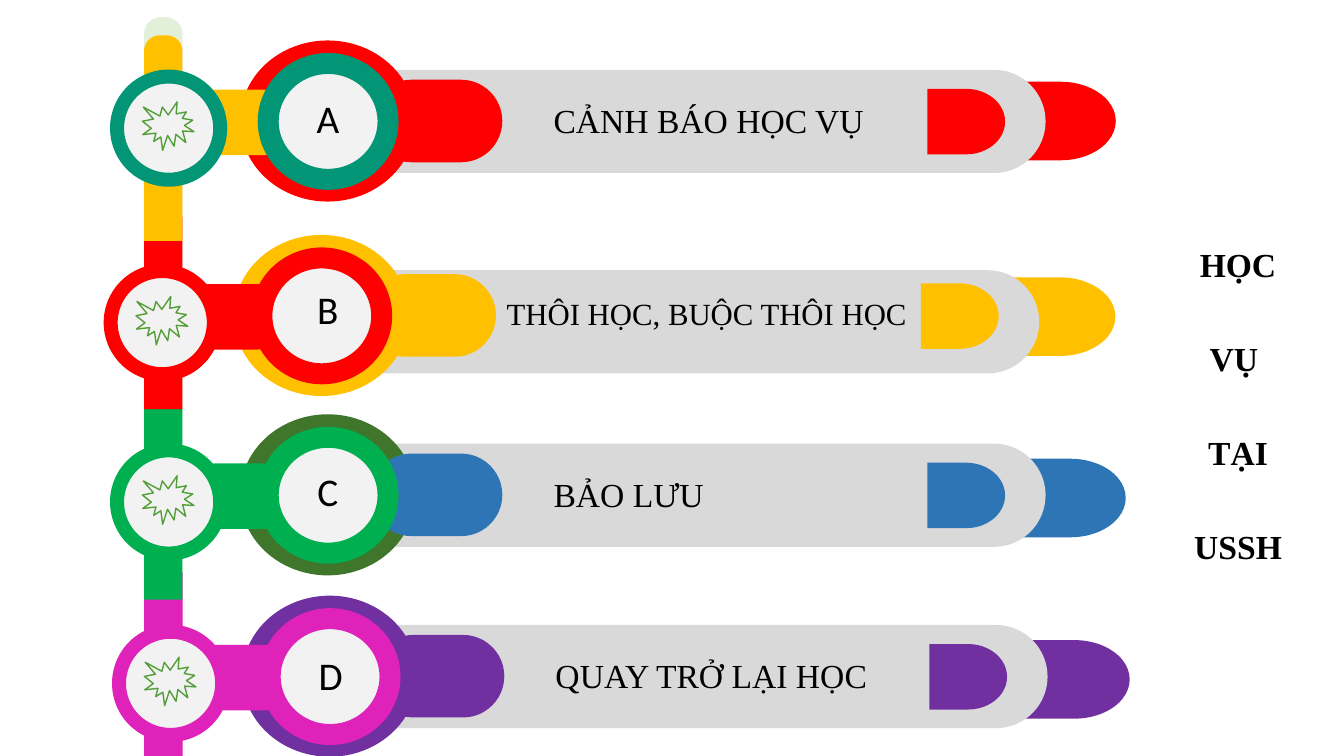
import pptx
import pptx.dml.color
import pptx.enum.shapes
import pptx.enum.text
import pptx.util

Cm = pptx.util.Cm
Pt = pptx.util.Pt
KIND = pptx.enum.shapes.MSO_SHAPE
ALIGN = pptx.enum.text.PP_ALIGN
ANCHOR = pptx.enum.text.MSO_ANCHOR
FIT = pptx.enum.text.MSO_AUTO_SIZE

PALE, GREY, BLACK, LEAF = "F2F2F2", "D9D9D9", "000000", "549E39"
SERIF, SANS = "Times New Roman", "Calibri"

# Spine pieces: top, colour, rotation, from back to front
SPINE = [
    (14.43, "DE22BA", 180),
    (9.93, "00B050", 0),
    (5.13, "FF0000", 0),
    (0.89, "FFC000", 0),
]

# Each row: corner of its large disc, wording, colours, and its own offsets
ROWS = [
    dict(corner=(6.1, 15.01), letter="D", title="QUAY TRỞ LẠI HỌC",
         disc="7030A0", accent="7030A0", link="DE22BA", ring="DE22BA",
         tail=(19.58, 1.12), letter_at=(1.68, 1.27)),
    dict(corner=(5.89, 5.92), letter="B", title="THÔI HỌC, BUỘC THÔI HỌC",
         disc="FFC000", accent="FFC000", link="FF0000", ring="FF0000",
         tail=(19.43, 1.07), letter_at=(1.85, 1.14),
         bar_top=0.89, title_box=(6.63, 1.37, 11.71, 1.19), title_size=22),
    dict(corner=(6.05, 10.44), letter="C", title="BẢO LƯU",
         disc="3F762B", accent="2E75B6", link="00B050", ring="00B050",
         tail=(19.53, 1.12), letter_at=(1.7, 1.22)),
    dict(corner=(6.05, 1.02), letter="A", title="CẢNH BÁO HỌC VỤ",
         disc="FF0000", accent="FF0000", link="FFC000", ring="029676",
         tail=(19.28, 1.04), letter_at=(1.68, 1.22)),
]


def colour(value):
    return pptx.dml.color.RGBColor.from_string(value)


def add_part(page, kind, box, fill, line=None, width=0, adjust=()):
    part = page.shapes.add_shape(kind, *map(Cm, box))
    part.shadow.inherit = False
    part.fill.solid()
    part.fill.fore_color.rgb = colour(fill)
    if line:
        part.line.color.rgb = colour(line)
        part.line.width = Pt(width)
    else:
        part.line.fill.background()
    for index, value in enumerate(adjust):
        part.adjustments[index] = value
    return part


def add_span(para, text, size, font, bold=False):
    span = para.add_run()
    span.text = text
    span.font.size = Pt(size)
    span.font.name = font
    span.font.bold = bold
    span.font.color.rgb = colour(BLACK)


def add_label(page, box, text, size, font):
    frame = page.shapes.add_textbox(*map(Cm, box)).text_frame
    frame.word_wrap = True
    frame.auto_size = FIT.SHAPE_TO_FIT_TEXT
    add_span(frame.paragraphs[0], text, size, font)


def add_spine(page, left, top, width):
    add_part(page, KIND.ROUNDED_RECTANGLE, (left, top, width, 19.1),
             "E2F0D9", adjust=[0.443])
    for piece_top, fill, turn in SPINE:
        piece = add_part(page, KIND.ROUND_2_SAME_RECTANGLE,
                         (left, piece_top, width, 5.18), fill, adjust=[0.411, 0])
        piece.rotation = turn


def add_row(page, corner, letter, title, disc, accent, link, ring, tail, letter_at,
            bar_top=0.74, title_box=(7.65, 1.37, 10.03, 1.27), title_size=24):
    def place(x, y, width, height):
        return corner[0] + x, corner[1] + y, width, height

    # Bar with its tail, large disc and pills
    pill = KIND.ROUNDED_RECTANGLE
    add_part(page, KIND.FLOWCHART_DELAY, place(*tail, 2.79, 1.98), accent)
    add_part(page, pill, place(1.83, bar_top, 18.47, 2.6), GREY, adjust=[0.5])
    add_part(page, KIND.OVAL, place(0, 0, 4.42, 4.06), disc)
    add_part(page, pill, place(3.28, 0.99, 3.33, 2.08), accent, adjust=[0.5])
    add_part(page, pill, place(-1.47, 1.24, 2.87, 1.65), link, adjust=[0.5])

    # Rings, star and end marker
    add_part(page, KIND.OVAL, place(-3.1, 0.91, 2.6, 2.6), PALE, ring, 10)
    add_part(page, KIND.OVAL, place(0.71, 0.58, 3.02, 2.92), PALE, ring, 15)
    add_part(page, KIND.EXPLOSION1, place(-2.46, 1.55, 1.3, 1.22), PALE, LEAF, 1)
    add_part(page, KIND.FLOWCHART_DELAY, place(17.32, 1.22, 1.96, 1.65), accent)

    # Wording
    add_label(page, place(*title_box), title, title_size, SERIF)
    add_label(page, place(*letter_at, 1.9, 1.45), letter, 28, SANS)


def add_heading(page, box, words):
    frame = page.shapes.add_textbox(*map(Cm, box)).text_frame
    frame.word_wrap = True
    frame.vertical_anchor = ANCHOR.MIDDLE
    for index, word in enumerate(words):
        para = frame.add_paragraph() if index else frame.paragraphs[0]
        para.alignment = ALIGN.CENTER
        para.line_spacing = 1.5
        para.space_before = para.space_after = Pt(12)
        add_span(para, word, 24, SERIF, bold=True)


def main():
    deck = pptx.Presentation()
    deck.slide_width, deck.slide_height = Cm(33.87), Cm(19.05)
    page = deck.slides.add_slide(deck.slide_layouts[6])
    add_spine(page, 3.63, 0.43, 0.97)
    for row in ROWS:
        add_row(page, **row)
    add_heading(page, (29.31, 4.57, 3.78, 10.77), ["HỌC", "VỤ ", "TẠI", "USSH"])
    deck.save("out.pptx")


if __name__ == "__main__":
    main()
